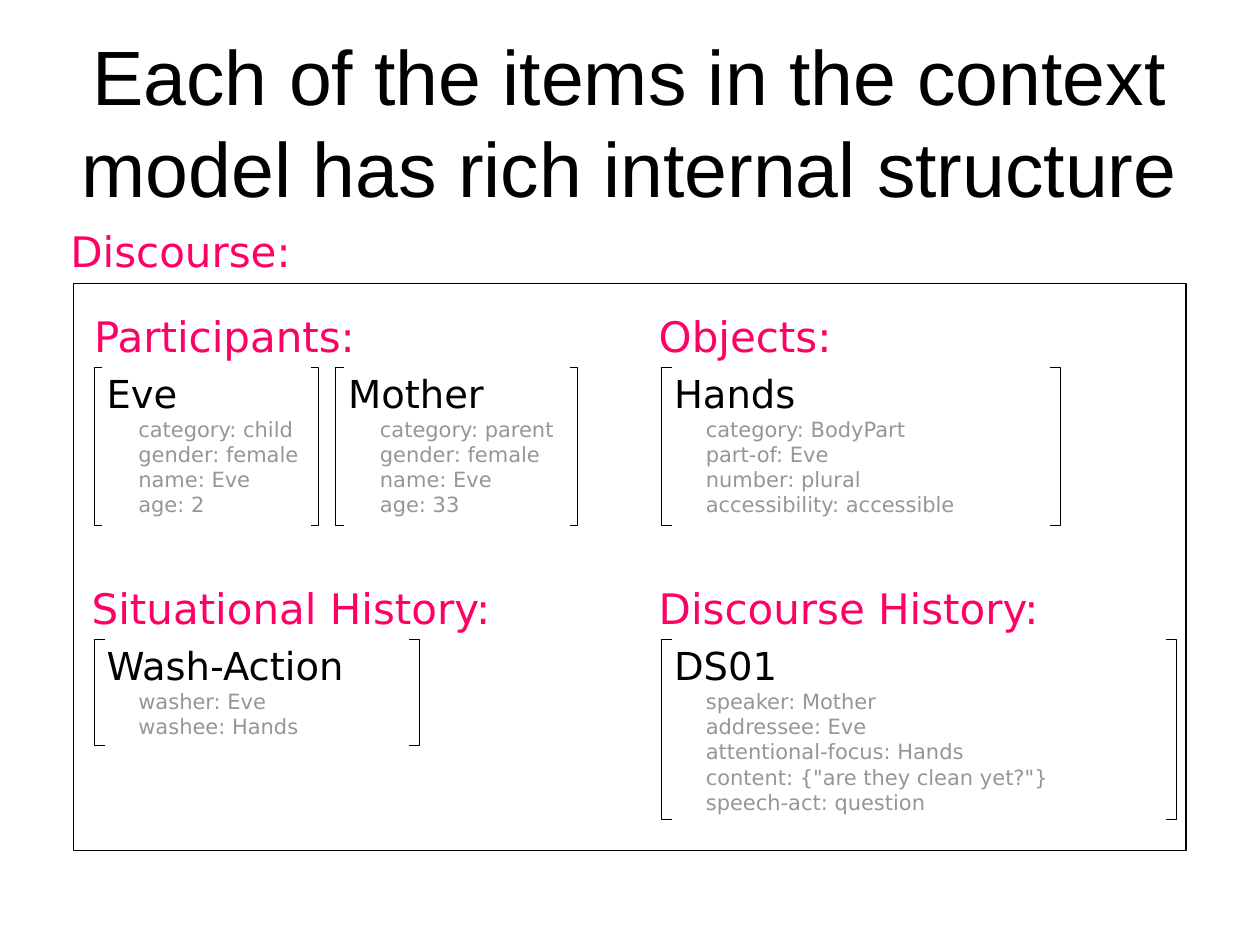
from dataclasses import dataclass

from pptx import Presentation
from pptx import util as u
from pptx.dml.color import RGBColor
from pptx.enum import shapes, text


@dataclass(frozen=True)
class Theme:
    ink: RGBColor = RGBColor(0, 0, 0)
    accent: RGBColor = RGBColor(0xFF, 0x00, 0x66)
    muted: RGBColor = RGBColor(0x96, 0x96, 0x96)
    title_font: str = "Arial"
    body_font: str = "DejaVu Sans"
    title_size: int = 44
    heading_size: int = 24
    name_size: int = 22
    feature_size: int = 12


theme = Theme()


def write(para, words, *, size, color, font=theme.body_font, indent=0, align=None):
    """Add formatted text to a paragraph, indented by a length in cm."""
    span = para.add_run()
    span.text = words
    span.font.size = u.Pt(size)
    span.font.name = font
    span.font.color.rgb = color
    para.alignment = align
    if indent:
        para._p.get_or_add_pPr().set("marL", str(u.Cm(indent)))


def add_frame(parent, left, top, width, height, inset_left, inset_top):
    """Add a wrapping text box, measured in cm, and return its text frame."""
    box = parent.add_textbox(u.Cm(left), u.Cm(top), u.Cm(width), u.Cm(height))
    frame = box.text_frame
    frame.word_wrap = True
    frame.margin_left, frame.margin_top = u.Cm(inset_left), u.Cm(inset_top)
    frame.margin_right = frame.margin_bottom = 0
    return frame


deck = Presentation()
deck.slide_width, deck.slide_height = u.Cm(25.4), u.Cm(19.05)
page = deck.slides.add_slide(deck.slide_layouts[6])

# Title
title = add_frame(page.shapes, 1.27, 0.84, 22.86, 3.18, 0.25, 0.13)
title.margin_right, title.margin_bottom = u.Cm(0.25), u.Cm(0.13)
title.vertical_anchor = text.MSO_ANCHOR.MIDDLE
write(title.paragraphs[0],
      "Each of the items in the context model has rich internal structure",
      size=theme.title_size, color=theme.ink, font=theme.title_font,
      align=text.PP_ALIGN.CENTER)

# Discourse border
border = page.shapes.add_shape(shapes.MSO_SHAPE.RECTANGLE,
                               u.Cm(1.48), u.Cm(5.72), u.Cm(22.43), u.Cm(11.43))
border.shadow.inherit = False
border.fill.background()
border.line.color.rgb = theme.ink
border.line.width = u.Pt(0.75)

# Section headings: words, left, top, width, left inset
headings = [
    ("Discourse:", 1.27, 4.45, 8.66, 0.15),
    ("Participants:", 1.7, 6.15, 8.61, 0.2),
    ("Objects:", 13.13, 6.15, 8.05, 0.15),
    ("Situational History:", 1.7, 11.64, 9.1, 0.15),
    ("Discourse History:", 13.13, 11.64, 9.73, 0.15),
]
for words, left, top, width, inset in headings:
    frame = add_frame(page.shapes, left, top, width, 1.07, inset, 0.1)
    write(frame.paragraphs[0], words, size=theme.heading_size, color=theme.accent)

# Bracketed items: name, left, top, width, height, bracket depth, features
left_column, right_column = 1.9, 13.34
upper_row, lower_row = 7.41, 12.9
items = [
    ("Wash-Action", left_column, lower_row, 6.56, 2.12, 0.21,
     ["washer: Eve", "washee: Hands"]),
    ("DS01", right_column, lower_row, 10.37, 3.61, 0.21,
     ["speaker: Mother", "addressee: Eve", "attentional-focus: Hands",
      'content: {"are they clean yet?"}', "speech-act: question"]),
    ("Eve", left_column, upper_row, 4.52, 3.18, 0.15,
     ["category: child", "gender: female", "name: Eve", "age: 2"]),
    ("Mother", 6.77, upper_row, 4.88, 3.18, 0.16,
     ["category: parent", "gender: female", "name: Eve", "age: 33"]),
    ("Hands", right_column, upper_row, 8.04, 3.18, 0.21,
     ["category: BodyPart", "part-of: Eve", "number: plural",
      "accessibility: accessible"]),
]
for name, left, top, width, height, depth, features in items:
    group = page.shapes.add_group_shape()
    frame = add_frame(group.shapes, left, top, width, height, 0.25, 0.05)
    write(frame.paragraphs[0], name, size=theme.name_size, color=theme.ink)
    for feature in features:
        write(frame.add_paragraph(), feature, size=theme.feature_size,
              color=theme.muted, indent=0.64)

    sides = [(shapes.MSO_SHAPE.LEFT_BRACKET, left),
             (shapes.MSO_SHAPE.RIGHT_BRACKET, left + width - depth)]
    for kind, x in sides:
        bracket = group.shapes.add_shape(kind, u.Cm(x), u.Cm(top),
                                         u.Cm(depth), u.Cm(height))
        bracket.adjustments[0] = 0
        bracket.shadow.inherit = False
        bracket.fill.background()
        bracket.line.color.rgb = theme.ink
        bracket.line.width = u.Pt(0.5)

deck.save("out.pptx")
